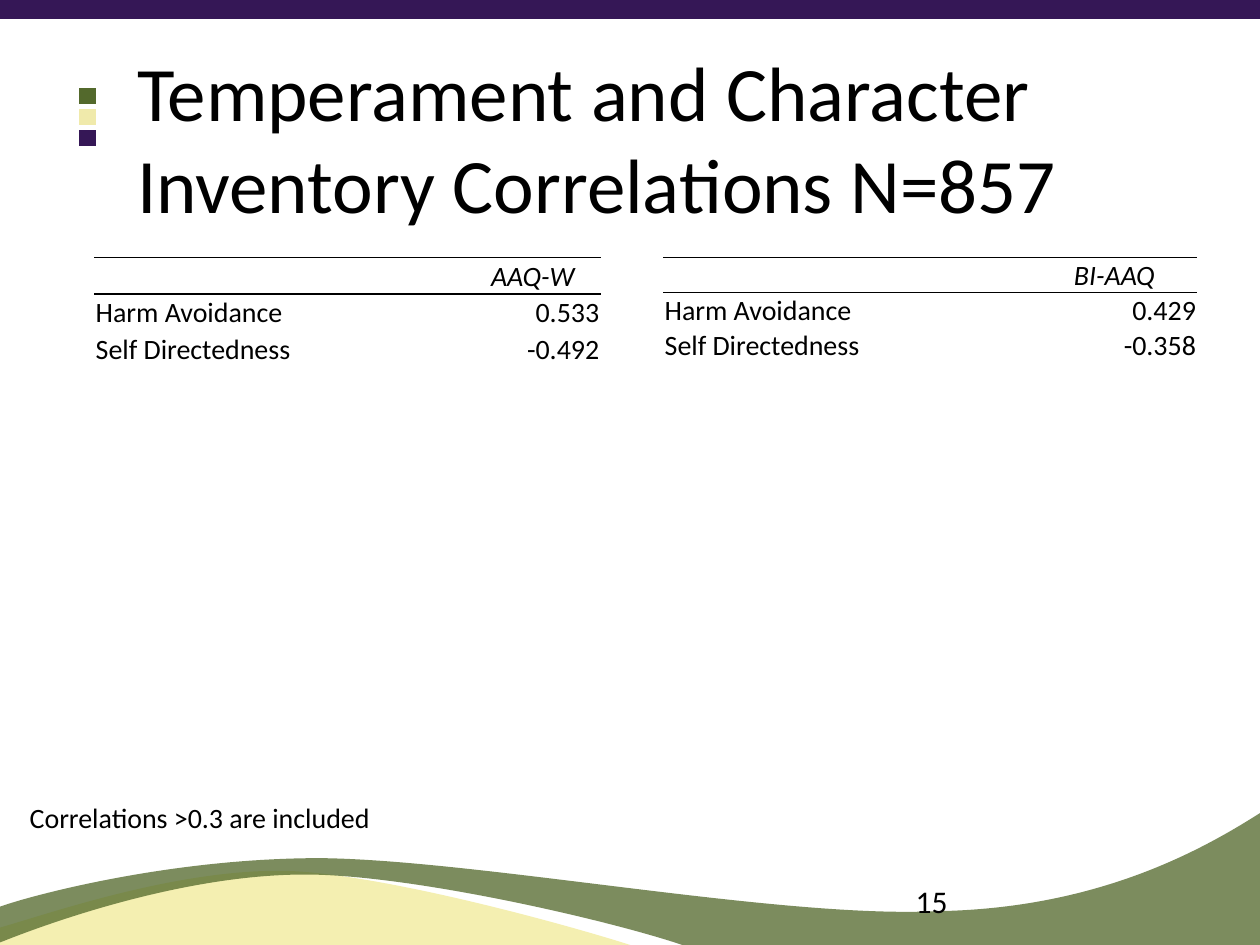
from dataclasses import dataclass

from lxml.etree import SubElement
from pptx import Presentation
from pptx.dml.color import RGBColor
from pptx.enum.shapes import MSO_CONNECTOR
from pptx.enum.text import MSO_ANCHOR, MSO_AUTO_SIZE, PP_ALIGN
from pptx.oxml.ns import qn
from pptx.util import Cm, Pt


@dataclass(frozen=True)
class Theme:
    font: str = "Calibri"
    text: str = "000000"
    purple: str = "351756"
    green: str = "53692C"
    yellow: str = "F0EAAB"
    pale_yellow: str = "F4EFB1"
    title_size: int = 44
    number_size: int = 18
    body_size: int = 16


@dataclass(frozen=True)
class Box:
    """A region of the page, in centimetres."""
    left: float
    top: float
    width: float
    height: float

    def place(self, shape):
        shape.left, shape.top = Cm(self.left), Cm(self.top)
        shape.width, shape.height = Cm(self.width), Cm(self.height)


THEME = Theme()

# Each wave is a start point and then steps: one point is a line, three a curve.
YELLOW_WAVE = [
    [(13.23, 1.75)],
    [(12.47, 1.45), (8.08, 0.18), (5.87, 0.08)],
    [(3.66, 0), (0.99, 0.94), (0, 1.22)],
    [(0, 1.75)],
]
GREEN_WAVE = [
    [(25.43, 2.87)],
    [(14.22, 2.87)],
    [(13.34, 2.44), (8.56, 1.27), (6.15, 1.27)],
    [(3.73, 1.27), (1.07, 2.21), (0, 2.64)],
    [(-0.03, 1.93)],
    [(0.43, 1.75), (3.3, 0.94), (6.45, 0.94)],
    [(9.63, 0.97), (15.72, 2.16), (18.87, 2.01)],
    [(22.15, 1.96), (24.26, 0.76), (25.45, 0)],
]


def style_text(para, size, align=PP_ALIGN.LEFT, italic=False):
    para.alignment = align
    font = para.font
    font.name, font.size, font.italic = THEME.font, Pt(size), italic
    font.color.rgb = RGBColor.from_string(THEME.text)


def bend_outline(shape, steps):
    """Join the line segments of each three-point step into one Bézier curve."""
    segments = iter(list(shape._element.iter(qn("a:lnTo"))))
    for step in steps[1:]:
        first, *others = [next(segments) for _ in step]
        if others:
            first.tag = qn("a:cubicBezTo")
        for other in others:
            first.append(other[0])
            other.getparent().remove(other)


def add_wave(page, left, top, steps, color, opacity=100):
    outline = [(Cm(left + x), Cm(top + y)) for step in steps for x, y in step]
    builder = page.shapes.build_freeform(*outline[0])
    builder.add_line_segments(outline[1:], close=True)
    wave = builder.convert_to_shape()
    bend_outline(wave, steps)
    wave.shadow.inherit = False
    wave.line.fill.background()
    wave.fill.solid()
    wave.fill.fore_color.rgb = RGBColor.from_string(color)
    if opacity < 100:
        color_node = wave._element.spPr.find(qn("a:solidFill"))[0]
        SubElement(color_node, qn("a:alpha"), val=str(opacity * 1000))


def add_bar(page, left, right, y, color, weight):
    """A level line with square ends."""
    bar = page.shapes.add_connector(
        MSO_CONNECTOR.STRAIGHT, Cm(left), Cm(y), Cm(right), Cm(y))
    bar.line.width = Pt(weight)
    bar.line.color.rgb = RGBColor.from_string(color)
    properties = bar._element.spPr
    properties.find(qn("a:ln")).set("cap", "sq")
    SubElement(properties, qn("a:effectLst"))


def add_decoration(page, box):
    add_wave(page, box.left, box.top + 17.48, YELLOW_WAVE, THEME.pale_yellow)
    add_bar(page, box.left + 0.13, box.left + box.width - 0.13,
            box.top + 0.19, THEME.purple, 10.5)
    for row, color in enumerate((THEME.green, THEME.yellow, THEME.purple)):
        add_bar(page, box.left + 1.75, box.left + 1.78,
                box.top + 1.94 + row * 0.42, color, 9)
    add_wave(page, box.left, box.top + 16.36, GREEN_WAVE, THEME.green, 76)


def fill_title(page, box, text):
    title = page.shapes.title
    box.place(title)
    frame = title.text_frame
    frame.auto_size = MSO_AUTO_SIZE.NONE
    frame.vertical_anchor = MSO_ANCHOR.TOP
    frame.text = text
    style_text(frame.paragraphs[0], THEME.title_size)


def add_label(page, box, text, size):
    label = page.shapes.add_textbox(0, 0, 0, 0)
    box.place(label)
    label.text_frame.word_wrap = True
    label.text_frame.text = text
    style_text(label.text_frame.paragraphs[0], size)


def set_borders(cell, ruled):
    """Rule the named edges (T, B) and clear the others."""
    properties = cell._tc.get_or_add_tcPr()
    for edge in "LRTB":
        line = SubElement(properties, qn(f"a:ln{edge}"), w=str(Pt(1)))
        if edge in ruled:
            fill = SubElement(line, qn("a:solidFill"))
            SubElement(fill, qn("a:srgbClr"), val=THEME.text)
        else:
            SubElement(line, qn("a:noFill"))


def add_correlations(page, box, name_width, rows):
    table = page.shapes.add_table(
        len(rows), 2, Cm(box.left), Cm(box.top), Cm(box.width), Cm(box.height)).table
    table.first_row = table.horz_banding = False
    table.columns[0].width = Cm(name_width)
    table.columns[1].width = Cm(box.width - name_width)
    for row, values in enumerate(rows):
        table.rows[row].height = Cm(box.height / len(rows))
        value_align = PP_ALIGN.RIGHT if row else PP_ALIGN.CENTER
        for column, value in enumerate(values):
            cell = table.cell(row, column)
            cell.margin_left = cell.margin_right = cell.margin_top = Cm(0.03)
            cell.margin_bottom = 0
            cell.vertical_anchor = MSO_ANCHOR.MIDDLE
            set_borders(cell, {0: "TB", 1: "T"}.get(row, ""))
            cell.fill.background()
            cell.text = value
            style_text(cell.text_frame.paragraphs[0], THEME.body_size,
                       value_align if column else PP_ALIGN.LEFT, italic=row == 0)


def main():
    deck = Presentation()
    deck.slide_width, deck.slide_height = Cm(25.4), Cm(19.05)
    page = deck.slides.add_slide(deck.slide_layouts[5])
    add_decoration(page, Box(0, 0, 25.4, 19.05))
    fill_title(page, Box(2.51, 0.77, 22.58, 3.18),
               "Temperament and Character Inventory Correlations N=857")
    add_label(page, Box(18.21, 17.65, 5.92, 1.02), "15", THEME.number_size)
    add_label(page, Box(0.35, 16.02, 10.29, 0.94),
              "Correlations >0.3 are included", THEME.body_size)
    add_correlations(page, Box(1.9, 5.19, 10.21, 2.22), 7.47, [
        ("", "AAQ-W"), ("Harm Avoidance", "0.533"), ("Self Directedness", "-0.492")])
    add_correlations(page, Box(13.37, 5.19, 10.77, 2.1), 7.42, [
        ("", "BI-AAQ"), ("Harm Avoidance", "0.429"), ("Self Directedness", "-0.358")])
    deck.save("out.pptx")


if __name__ == "__main__":
    main()
